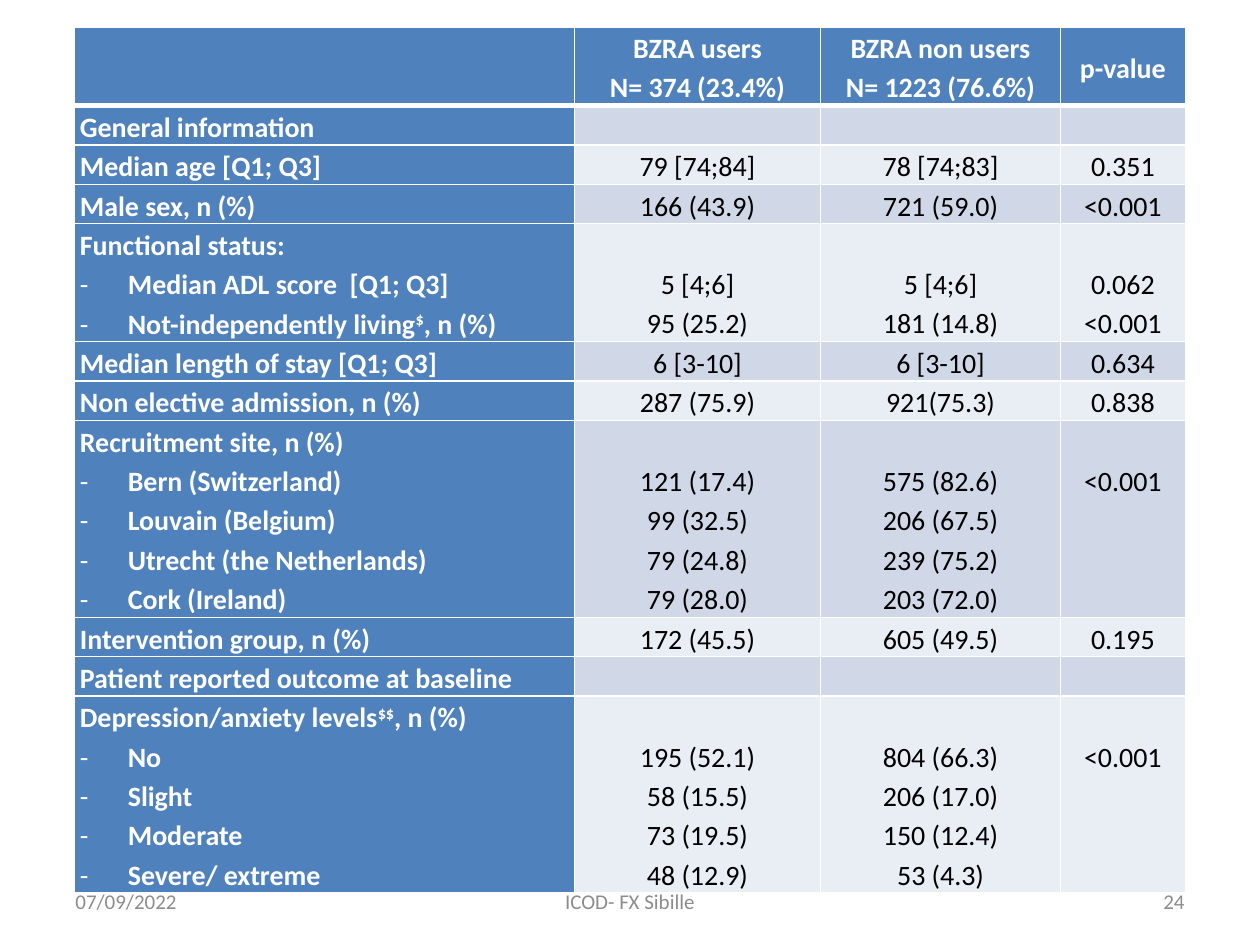
from dataclasses import dataclass

from lxml.etree import SubElement
from pptx import Presentation
from pptx.dml.color import RGBColor
from pptx.enum.text import MSO_ANCHOR, PP_ALIGN
from pptx.oxml import parse_xml
from pptx.oxml.ns import nsdecls, qn
from pptx.util import Pt


@dataclass(frozen=True)
class Theme:
    font: str = "Calibri"
    blue: str = "4F81BD"
    band_dark: str = "D0D8E8"
    band_light: str = "E9EDF4"
    white: str = "FFFFFF"
    black: str = "000000"
    grey: str = "8C8C8C"
    table_size: int = 16
    footer_size: int = 12


theme = Theme()
LINE = 22.4
INDENT = 27.4

HEADER = [[], ["BZRA users", "N= 374 (23.4%)"],
          ["BZRA non users", "N= 1223 (76.6%)"], ["p-value"]]

# Each row: labels, users, non users, p-values; "^" encloses a superscript.
# In rows with several labels the first is a heading without values.
ROWS = [
    (["General information"], [], [], []),
    (["Median age [Q1; Q3]"], ["79 [74;84]"], ["78 [74;83]"], ["0.351"]),
    (["Male sex, n (%)"], ["166 (43.9)"], ["721 (59.0)"], ["<0.001"]),
    (["Functional status:", "Median ADL score  [Q1; Q3]",
      "Not-independently living^$^, n (%)"],
     ["5 [4;6]", "95 (25.2)"], ["5 [4;6]", "181 (14.8)"], ["0.062", "<0.001"]),
    (["Median length of stay [Q1; Q3]"], ["6 [3-10]"], ["6 [3-10]"], ["0.634"]),
    (["Non elective admission, n (%)"], ["287 (75.9)"], ["921(75.3)"], ["0.838"]),
    (["Recruitment site, n (%)", "Bern (Switzerland)", "Louvain (Belgium)",
      "Utrecht (the Netherlands)", "Cork (Ireland)"],
     ["121 (17.4)", "99 (32.5)", "79 (24.8)", "79 (28.0)"],
     ["575 (82.6)", "206 (67.5)", "239 (75.2)", "203 (72.0)"], ["<0.001"]),
    (["Intervention group, n (%)"], ["172 (45.5)"], ["605 (49.5)"], ["0.195"]),
    (["Patient reported outcome at baseline"], [], [], []),
    (["Depression/anxiety levels^$$^, n (%)", "No", "Slight", "Moderate",
      "Severe/ extreme"],
     ["195 (52.1)", "58 (15.5)", "73 (19.5)", "48 (12.9)"],
     ["804 (66.3)", "206 (17.0)", "150 (12.4)", "53 (4.3)"], ["<0.001"]),
]


def write(paragraph, text, size, color, bold=False):
    """Write text, raising the parts enclosed in ^."""
    for i, part in enumerate(text.split("^")):
        run = paragraph.add_run()
        run.text = part
        run.font.name = theme.font
        run.font.size = Pt(size)
        run.font.bold = bold
        run.font.color.rgb = RGBColor.from_string(color)
        if i % 2:
            run.font._element.set("baseline", "30000")


def style_cell(cell, fill, top, bottom):
    """Set fill, margins and white borders."""
    cell.fill.solid()
    cell.fill.fore_color.rgb = RGBColor.from_string(fill)
    cell.margin_left = cell.margin_right = Pt(3)
    cell.margin_top = cell.margin_bottom = 0
    borders = {"lnL": 1, "lnR": 1, "lnT": top, "lnB": bottom}
    for position, (tag, width) in enumerate(borders.items()):
        cell._tc.tcPr.insert(position, parse_xml(
            f'<a:{tag} {nsdecls("a")} w="{Pt(width)}"><a:solidFill>'
            f'<a:srgbClr val="{theme.white}"/></a:solidFill></a:{tag}>'))


presentation = Presentation()
presentation.slide_width = Pt(720)
presentation.slide_height = Pt(540)
slide = presentation.slides.add_slide(presentation.slide_layouts[6])

# Table of patient characteristics
column_widths = [285.5, 140.8, 137, 71.4]
line_counts = [2] + [len(row[0]) for row in ROWS]
characteristics = slide.shapes.add_table(
    len(ROWS) + 1, len(column_widths), Pt(42.7), Pt(15.3),
    Pt(sum(column_widths)), Pt(LINE * sum(line_counts))).table
characteristics.first_col = True
for column, width in zip(characteristics.columns, column_widths):
    column.width = Pt(width)
for row, count in zip(characteristics.rows, line_counts):
    row.height = Pt(LINE * count)

for r, contents in enumerate([HEADER] + ROWS):
    is_header = r == 0
    band = theme.band_dark if r % 2 else theme.band_light
    for c, lines in enumerate(contents):
        is_label = c == 0
        on_blue = is_header or is_label
        cell = characteristics.cell(r, c)
        style_cell(cell, theme.blue if on_blue else band,
                   top=3 if r == 1 else 1, bottom=3 if is_header else 1)
        if is_header:
            cell.vertical_anchor = MSO_ANCHOR.MIDDLE
        elif not is_label and line_counts[r] > 1:
            cell.margin_top = Pt(LINE)  # values start below the heading

        for i, text in enumerate(lines):
            frame = cell.text_frame
            paragraph = frame.add_paragraph() if i else frame.paragraphs[0]
            paragraph.line_spacing = 1.15
            paragraph.alignment = PP_ALIGN.LEFT if is_label else PP_ALIGN.CENTER
            write(paragraph, text, theme.table_size,
                  theme.white if on_blue else theme.black, on_blue)
            if is_label and i:
                properties = paragraph._p.get_or_add_pPr()
                properties.set("marL", str(Pt(INDENT)))
                properties.set("indent", str(-Pt(INDENT)))
                SubElement(properties, qn("a:buFont"), typeface=theme.font)
                SubElement(properties, qn("a:buChar"), char="-")

# Footer: date, author, page
footer = [
    ("07/09/2022", 36, 168, PP_ALIGN.LEFT),
    ("ICOD- FX Sibille", 246, 228, PP_ALIGN.CENTER),
    ("24", 516, 168, PP_ALIGN.RIGHT),
]
for text, left, width, alignment in footer:
    frame = slide.shapes.add_textbox(
        Pt(left), Pt(500.5), Pt(width), Pt(28.75)).text_frame
    frame.word_wrap = True
    frame.vertical_anchor = MSO_ANCHOR.MIDDLE
    frame.paragraphs[0].alignment = alignment
    write(frame.paragraphs[0], text, theme.footer_size, theme.grey)

presentation.save("out.pptx")
